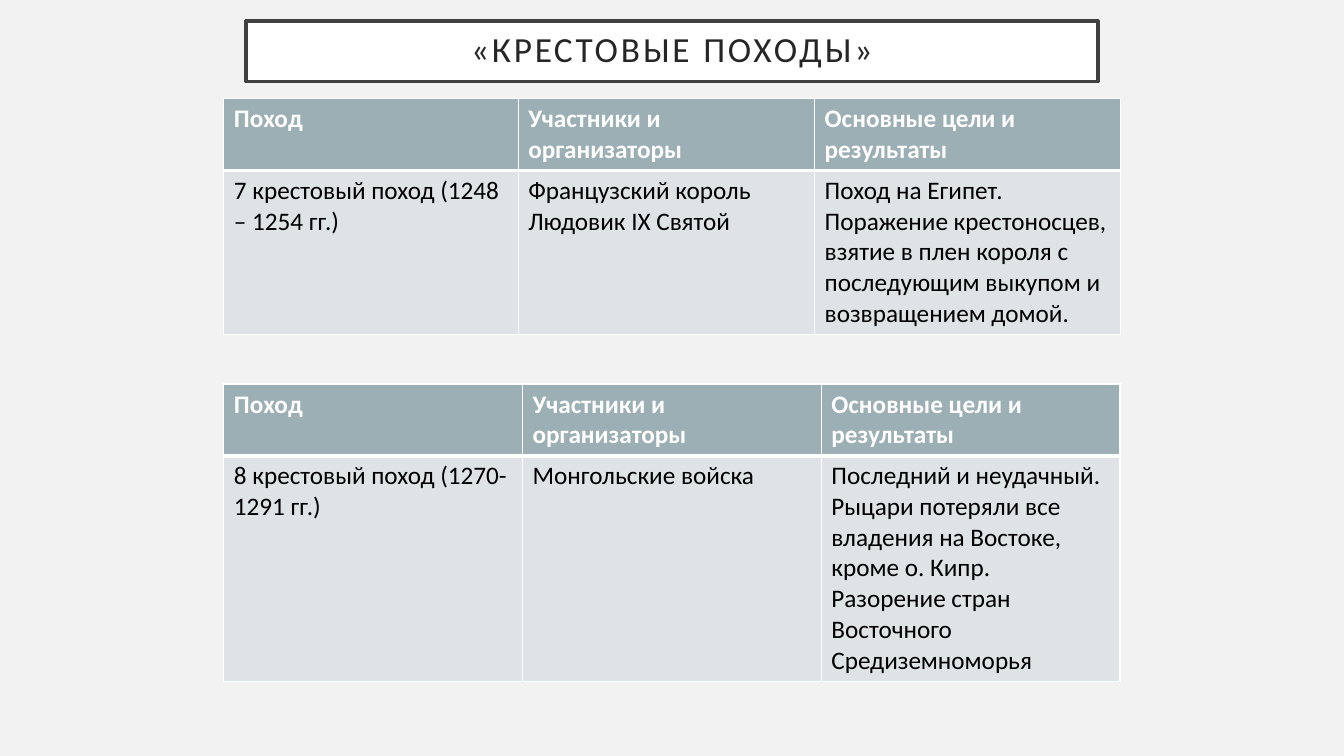
from dataclasses import dataclass

from lxml import etree
from pptx import Presentation
from pptx.dml.color import RGBColor
from pptx.enum.shapes import MSO_SHAPE
from pptx.enum.text import MSO_ANCHOR, PP_ALIGN
from pptx.oxml.ns import qn
from pptx.util import Inches, Pt

RECT = MSO_SHAPE.RECTANGLE
MIDDLE = MSO_ANCHOR.MIDDLE
CENTER = PP_ALIGN.CENTER


@dataclass(frozen=True)
class Theme:
    font: str = "Calibri"
    title_size: float = 25.2
    title_spacing: float = 2
    cell_size: float = 18
    background: str = "F2F2F2"
    white: str = "FFFFFF"
    frame: str = "404040"
    title_text: str = "262626"
    header_fill: str = "9BAFB5"
    body_fill: str = "DEE3E5"
    body_text: str = "000000"
    thin: float = 1
    thick: float = 3


THEME = Theme()
SLIDE_W, SLIDE_H = 13.33, 7.5
TABLE_W = 8.89
TABLE_X = (SLIDE_W - TABLE_W) / 2
TITLE_W = 8.45
HEADER_H = 0.7

HEADERS = ["Поход", "Участники и организаторы", "Основные цели и результаты"]
# Each crusade: top, body height, column widths, body cells
CRUSADES = [
    (0.98, 1.63, (2.92, 2.94, 3.03),
     ["7 крестовый поход (1248 – 1254 гг.)",
      "Французский король Людовик IX Святой",
      "Поход на Египет. Поражение крестоносцев, взятие в плен короля "
      "с последующим выкупом и возвращением домой."]),
    (3.81, 2.24, (TABLE_W / 3,) * 3,
     ["8 крестовый поход (1270-1291 гг.)",
      "Монгольские войска",
      "Последний и неудачный. Рыцари потеряли все владения на Востоке, "
      "кроме о. Кипр. Разорение стран Восточного Средиземноморья"]),
]


def rgb(color):
    return RGBColor.from_string(color)


def add_run(p, text, size, color, bold=False):
    r = p.add_run()
    r.text = text
    r.font.name = THEME.font
    r.font.size = Pt(size)
    r.font.bold = bold
    r.font.color.rgb = rgb(color)
    return r


def set_borders(cell, widths):
    """Draw white cell borders; widths maps a side (L, R, T, B) to points."""
    tc_pr = cell._tc.get_or_add_tcPr()
    for side, width in widths.items():
        ln = etree.SubElement(tc_pr, qn(f"a:ln{side}"), w=str(Pt(width)))
        fill = etree.SubElement(ln, qn("a:solidFill"))
        etree.SubElement(fill, qn("a:srgbClr"), val=THEME.white)


def add_title(slide, x, y, w, h, text):
    sp = slide.shapes.add_shape(RECT, Inches(x), Inches(y), Inches(w), Inches(h))
    sp.shadow.inherit = False
    sp.fill.solid()
    sp.fill.fore_color.rgb = rgb(THEME.white)
    sp.line.color.rgb = rgb(THEME.frame)
    sp.line.width = Pt(2.5)
    tf = sp.text_frame
    tf.word_wrap = True
    tf.vertical_anchor = MIDDLE
    tf.margin_left = tf.margin_right = Inches(0.2)
    tf.margin_top = tf.margin_bottom = Inches(0.2)
    p = tf.paragraphs[0]
    p.alignment = CENTER
    p.line_spacing = 0.9
    r = add_run(p, text, THEME.title_size, THEME.title_text)
    r.font._element.set("spc", str(THEME.title_spacing * 100))


def add_crusade_table(slide, x, y, body_h, col_widths, body):
    rows = [HEADERS, body]
    frame = slide.shapes.add_table(
        len(rows), len(HEADERS), Inches(x), Inches(y),
        Inches(sum(col_widths)), Inches(HEADER_H + body_h))
    table = frame.table
    for column, width in zip(table.columns, col_widths):
        column.width = Inches(width)
    for row, height in zip(table.rows, (HEADER_H, body_h)):
        row.height = Inches(height)

    for i, texts in enumerate(rows):
        header = i == 0
        for j, text in enumerate(texts):
            cell = table.cell(i, j)
            # A thick rule separates the header from the body
            set_borders(cell, {"L": THEME.thin, "R": THEME.thin,
                               "T": THEME.thin if header else THEME.thick,
                               "B": THEME.thick if header else THEME.thin})
            cell.fill.solid()
            cell.fill.fore_color.rgb = rgb(
                THEME.header_fill if header else THEME.body_fill)
            add_run(cell.text_frame.paragraphs[0], text, THEME.cell_size,
                    THEME.white if header else THEME.body_text, bold=header)


def main():
    prs = Presentation()
    prs.slide_width, prs.slide_height = Inches(SLIDE_W), Inches(SLIDE_H)
    s = prs.slides.add_slide(prs.slide_layouts[6])
    s.background.fill.solid()
    s.background.fill.fore_color.rgb = rgb(THEME.background)

    # Title
    add_title(s, (SLIDE_W - TITLE_W) / 2, 0.21, TITLE_W, 0.6,
              "«КРЕСТОВЫЕ ПОХОДЫ»")
    # One table per crusade
    for top, body_h, col_widths, body in CRUSADES:
        add_crusade_table(s, TABLE_X, top, body_h, col_widths, body)

    prs.save("out.pptx")


if __name__ == "__main__":
    main()
